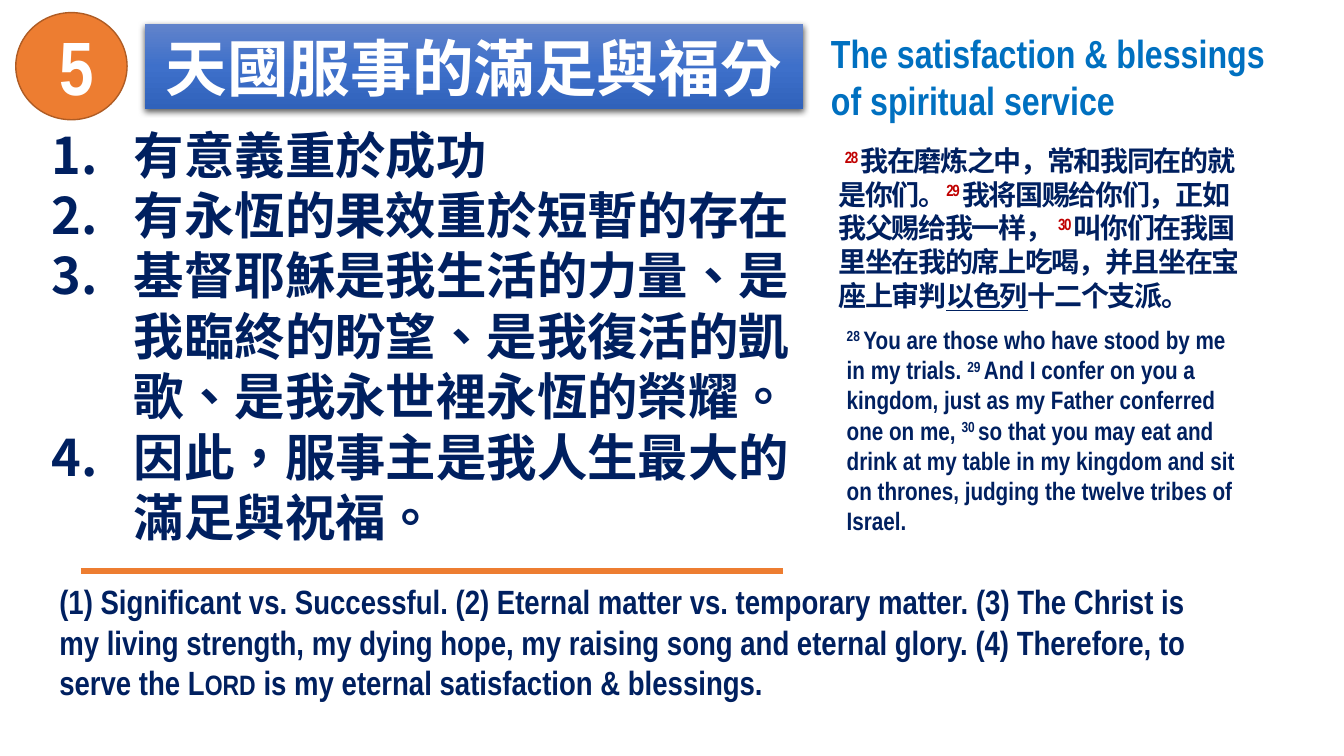
import pptx
import pptx.util
import pptx.dml.color
import pptx.enum.lang
import pptx.enum.shapes
import pptx.enum.text
import pptx.oxml
import pptx.oxml.ns

PX = 9525
LATIN, HAN = "Arial Narrow", "Noto Sans CJK TC"
NAVY, ORANGE, RED, BLUE, WHITE = "002060", "ED7D31", "C00000", "0070C0", "FFFFFF"
NS = pptx.oxml.ns.nsdecls("a")
LANG = pptx.enum.lang.MSO_LANGUAGE_ID
SHAPE = pptx.enum.shapes.MSO_SHAPE
ALIGN = pptx.enum.text.PP_ALIGN

POINTS = [
    "有意義重於成功",
    "有永恆的果效重於短暫的存在",
    "基督耶穌是我生活的力量、是我臨終的盼望、是我復活的凱歌、是我永世裡永恆的榮耀。",
    "因此，服事主是我人生最大的滿足與祝福。",
]
SUP = {"base": 30}
MARK = {"base": 30, "color": RED}
VERSE_ZH = [
    (" ", {}), ("28 ", MARK),
    ("我在磨炼之中，常和我同在的就是你们。", {}), ("29 ", MARK),
    ("我将国赐给你们，正如我父赐给我一样， ", {}), ("30 ", MARK),
    ("叫你们在我国里坐在我的席上吃喝，并且坐在宝座上审判", {}),
    ("以色列", {"under": True}), ("十二个支派。", {}),
]
VERSE_EN = [
    ("28 ", SUP), ("You are those who have stood by me in my trials. ", {}),
    ("29 ", SUP), ("And I confer on you a kingdom, just as my Father "
                   "conferred one on me, ", {}),
    ("30 ", SUP), ("so that you may eat and drink at my table in my kingdom "
                   "and sit on thrones, judging the twelve tribes of Israel.", {}),
]
SUMMARY = [
    ("(1) Significant vs. Successful. (2) Eternal matter vs. temporary matter. "
     "(3) The Christ is my living strength, my dying hope, my raising song and "
     "eternal glory. (4) Therefore, to serve the L", {}),
    ("ORD", {"size": 20}),
    (" is my eternal satisfaction & blessings.", {}),
]


def rgb(code):
    return pptx.dml.color.RGBColor.from_string(code)


def emu(*sizes):
    return [pptx.util.Emu(size * PX) for size in sizes]


def xml(body):
    return pptx.oxml.parse_xml(body)


def style(run, size, color=NAVY, font=LATIN, han=None, lang=None,
          base=0, under=False, space=0):
    """Format a run; han is its East Asian font, space its tracking."""
    face = run.font
    face.size, face.bold, face.name = pptx.util.Pt(size), True, font
    face.color.rgb = rgb(color)
    if under:
        face.underline = True
    if lang:
        face.language_id = lang
    props = run._r.get_or_add_rPr()
    if base:
        props.set("baseline", str(base * 1000))
    if space:
        props.set("spc", str(space * 100))
    if han:
        props.find(pptx.oxml.ns.qn("a:latin")).addnext(
            xml(f'<a:ea {NS} typeface="{han}"/>'))


def write(slide, box, parts, **look):
    """Add a text box of one paragraph; each part may change the look."""
    frame = slide.shapes.add_textbox(*emu(*box)).text_frame
    frame.word_wrap = True
    frame.auto_size = pptx.enum.text.MSO_AUTO_SIZE.SHAPE_TO_FIT_TEXT
    for text, change in parts:
        run = frame.paragraphs[0].add_run()
        run.text = text
        style(run, **{**look, **change})
    return frame


def badge(slide, box):
    left, top, width, height = box
    disc = slide.shapes.add_shape(SHAPE.OVAL, *emu(*box))
    disc.shadow.inherit = False
    disc.fill.solid()
    disc.fill.fore_color.rgb = rgb(ORANGE)
    disc.line.color.rgb = rgb("AF5C24")
    disc.line.width = pptx.util.Pt(1)
    write(slide, (left + 32, top + 2, 60, height - 5), [("5", {})],
          size=54, color=WHITE)


def banner(slide, box):
    bar = slide.shapes.add_shape(SHAPE.RECTANGLE, *emu(*box))
    bar.shadow.inherit = False
    bar.line.fill.background()
    stops = "".join(
        f'<a:gs pos="{spot * 1000}"><a:srgbClr val="{code}"/></a:gs>'
        for spot, code in [(0, "6183CB"), (50, "3E70CA"), (100, "3062BB")])
    props = bar._element.spPr
    props.find(pptx.oxml.ns.qn("a:prstGeom")).addnext(xml(
        f'<a:gradFill {NS} rotWithShape="1"><a:gsLst>{stops}</a:gsLst>'
        '<a:lin ang="5400000" scaled="0"/></a:gradFill>'))
    props.find(pptx.oxml.ns.qn("a:effectLst")).append(xml(
        f'<a:outerShdw {NS} blurRad="57150" dist="19050" dir="5400000" '
        'algn="ctr" rotWithShape="0"><a:srgbClr val="000000">'
        '<a:alpha val="63000"/></a:srgbClr></a:outerShdw>'))
    frame = bar.text_frame
    frame.text = "天國服事的滿足與福分"
    frame.word_wrap = True
    frame.auto_size = pptx.enum.text.MSO_AUTO_SIZE.SHAPE_TO_FIT_TEXT
    line = frame.paragraphs[0]
    line.alignment = ALIGN.CENTER
    style(line.runs[0], 44, WHITE, HAN, HAN, LANG.TRADITIONAL_CHINESE)


def points(slide, box):
    frame = write(slide, box, [])
    for index, text in enumerate(POINTS):
        item = frame.add_paragraph() if index else frame.paragraphs[0]
        item.text = text
        style(item.runs[0], 36, han=HAN, lang=LANG.TRADITIONAL_CHINESE)
        props = item._p.get_or_add_pPr()
        props.set("marL", str(78 * PX))
        props.set("indent", str(-78 * PX))
        props.append(xml(f'<a:buFont {NS} typeface="{HAN}"/>'))
        props.append(xml(f'<a:buAutoNum {NS} type="arabicPeriod"/>'))


def verses(slide, box):
    left, top, width, height = box
    write(slide, (left + 7, top + 109, 416, 171), VERSE_ZH,
          size=20, space=-1, lang=LANG.SIMPLIFIED_CHINESE)
    write(slide, (left + 15, top + 281, 401, 213), VERSE_EN, size=18)
    write(slide, (left, top, width, 100),
          [("The satisfaction & blessings of spiritual service", {})],
          size=28, color=BLUE)


def summary(slide, box):
    left, top, width, height = box
    rule = slide.shapes.add_connector(
        pptx.enum.shapes.MSO_CONNECTOR.STRAIGHT,
        *emu(left + 30, top, left + 699, top))
    rule.line.color.rgb = rgb(ORANGE)
    rule.line.width = pptx.util.Pt(4.5)
    rule._element.spPr.append(xml(f"<a:effectLst {NS}/>"))
    write(slide, (left, top + 5, width, height - 5), SUMMARY, size=24)


def main():
    deck = pptx.Presentation()
    deck.slide_width, deck.slide_height = emu(1280, 720)
    slide = deck.slides.add_slide(deck.slide_layouts[6])
    banner(slide, (138, 23, 627, 81))
    badge(slide, (15, 12, 106, 102))
    verses(slide, (782, 23, 444, 494))
    summary(slide, (47, 544, 1111, 131))
    points(slide, (40, 113, 735, 417))
    deck.save("out.pptx")


if __name__ == "__main__":
    main()
